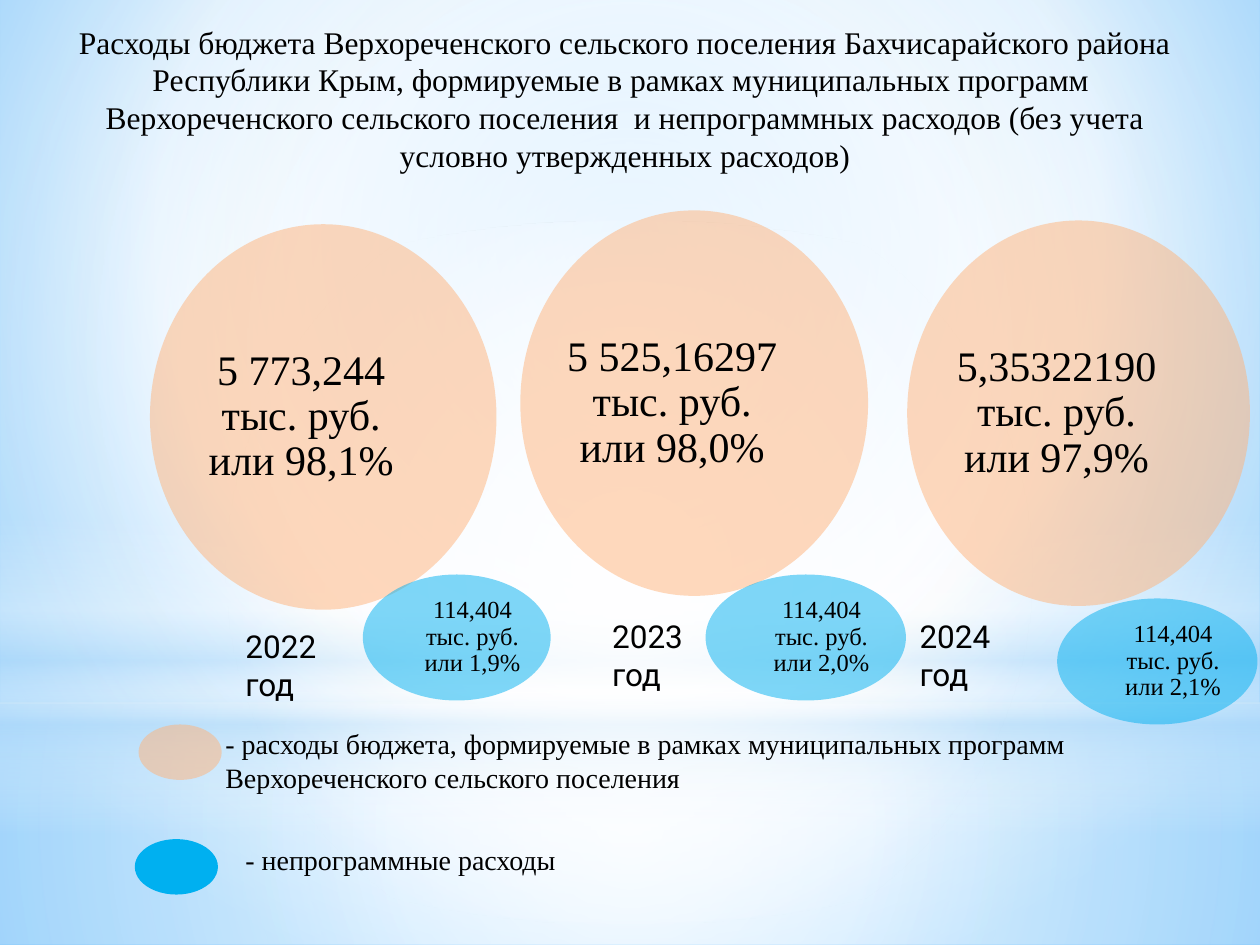
import math
from lxml import etree
from pptx import Presentation
from pptx.dml.color import RGBColor
from pptx.enum.shapes import MSO_SHAPE
from pptx.enum.text import MSO_ANCHOR, MSO_AUTO_SIZE, PP_ALIGN
from pptx.oxml.ns import qn
from pptx.util import Inches, Pt

RECT, OVAL = MSO_SHAPE.RECTANGLE, MSO_SHAPE.OVAL
LEFT, CENTER = PP_ALIGN.LEFT, PP_ALIGN.CENTER
TOP, MIDDLE = MSO_ANCHOR.TOP, MSO_ANCHOR.MIDDLE
FIT_SHAPE, FIT_NONE = MSO_AUTO_SIZE.SHAPE_TO_FIT_TEXT, MSO_AUTO_SIZE.NONE

# Content; boxes are left, top, width, height in inches
TITLE = ("Расходы бюджета Верхореченского сельского поселения Бахчисарайского района "
         "Республики Крым, формируемые в рамках муниципальных программ  "
         "Верхореченского сельского поселения  и непрограммных расходов "
         "(без учета условно утвержденных расходов)")
TITLE_BOX = (0.43, 0.13, 9.06, 1.31)

YEARS = [
    {"label": ("2022 год", (1.85, 4.93, 1.1, 0.71)),
     "program": ("5 773,244 тыс. руб. или 98,1%", (1.19, 1.78, 2.75, 3.06)),
     "other": ("114,404 тыс. руб. или 1,9%", (2.88, 4.56, 1.49, 1))},
    {"label": ("2023 год", (4.76, 4.85, 0.81, 0.71)),
     "program": ("5 525,16297 тыс. руб. или 98,0%", (4.13, 1.67, 2.76, 3.06)),
     "other": ("114,404 тыс. руб. или 2,0%", (5.6, 4.56, 1.59, 1))},
    {"label": ("2024 год", (7.2, 4.85, 1.1, 0.71)),
     "program": ("5,35322190 тыс. руб. или 97,9%", (7.2, 1.75, 2.72, 3.06)),
     "other": ("114,404 тыс. руб. или 2,1%", (8.39, 4.75, 1.59, 1))},
]

LEGEND = [
    ("program", 50, (1.1, 5.75, 0.66, 0.44), (1.69, 5.72, 7.72, 0.64),
     "- расходы бюджета, формируемые в рамках муниципальных программ "
     "Верхореченского сельского поселения"),
    ("other", 100, (1.07, 6.66, 0.66, 0.44), (1.85, 6.64, 6.77, 0.37),
     "- непрограммные расходы"),
]

THEME = {
    "serif": "Times New Roman", "sans": "Roboto", "text": "000000",
    "program": "FFB37A", "other": "00B0F0",
    "title_size": 18, "year_size": 18, "legend_size": 16,
    "program_size": 24, "other_size": 14,
}
BUBBLE_INSETS = {"program": (0.34, 0.3, 0.69, 0.3), "other": (0.48, 0.18, 0.23, 0.18)}
TEXT_INSETS = (0.1, 0.05, 0.1, 0.05)
CURVE = 4 / 3 * (math.sqrt(2) - 1)  # handle length of a quarter circle

# Gradient stops: position %, colour, opacity %
CENTRE = (50, 50, 50, 50)
BACKGROUND = [(0, "9ED5FF", 100), (60, "FFFFFF", 100), (100, "5BB9FF", 100)]
BACKDROP = [
    (RECT, (0, 5.58, 10, 1.92), CENTRE,
     [(0, "FFFFFF", 91), (37, "FFFFFF", 76), (100, "B4DCFA", 79)]),
    (RECT, (0, 0, 10, 5.58), CENTRE,
     [(0, "FFFFFF", 89), (48, "FFFFFF", 62), (100, "B4DCFA", 79)]),
    (RECT, (0, 4.12, 10, 2.5), None,
     [(0, "FFFFFF", 0), (29, "FFFFFF", 30), (45, "B4DCFA", 40),
      (55, "FFFFFF", 26), (65, "B4DCFA", 60), (100, "FFFFFF", 0)]),
    (OVAL, (0, 1.75, 10, 5.58), CENTRE, [(0, "FFFFFF", 100), (56, "FFFFFF", 0)]),
]


def inches(box):
    return [Inches(value) for value in box]


def set_opacity(color, percent):
    if percent < 100:
        etree.SubElement(color, qn("a:alpha"), val=str(percent * 1000))


def set_gradient(parent, stops, focus):
    """Swap the solid fill under parent for a radial or a vertical gradient."""
    solid = parent.find(".//" + qn("a:solidFill"))
    gradient = etree.Element(qn("a:gradFill"), rotWithShape="1")
    stop_list = etree.SubElement(gradient, qn("a:gsLst"))
    for position, color, opacity in stops:
        stop = etree.SubElement(stop_list, qn("a:gs"), pos=str(position * 1000))
        set_opacity(etree.SubElement(stop, qn("a:srgbClr"), val=color), opacity)
    if focus:
        path = etree.SubElement(gradient, qn("a:path"), path="circle")
        edges = {side: str(value * 1000) for side, value in zip("ltrb", focus)}
        etree.SubElement(path, qn("a:fillToRect"), **edges)
    else:
        etree.SubElement(gradient, qn("a:lin"), ang="5400000", scaled="0")
    solid.getparent().replace(solid, gradient)


def paint(shape, color, opacity=100):
    shape.shadow.inherit = False
    shape.line.fill.background()
    shape.fill.solid()
    shape.fill.fore_color.rgb = RGBColor.from_string(color)
    set_opacity(shape.element.spPr.find(".//" + qn("a:srgbClr")), opacity)


def write(shape, text, size, font="serif", align=LEFT, anchor=TOP,
          insets=TEXT_INSETS, fit=FIT_SHAPE, spacing=1.0):
    frame = shape.text_frame
    frame.text = text
    sides = ("margin_left", "margin_top", "margin_right", "margin_bottom")
    frame_format = {"word_wrap": True, "auto_size": fit, "vertical_anchor": anchor,
                    **dict(zip(sides, inches(insets)))}
    paragraph = frame.paragraphs[0]
    run_font = paragraph.runs[0].font
    formats = [
        (frame, frame_format),
        (paragraph, {"alignment": align, "line_spacing": spacing}),
        (run_font, {"name": THEME[font], "size": Pt(THEME[size])}),
        (run_font.color, {"rgb": RGBColor.from_string(THEME["text"])}),
    ]
    for target, values in formats:
        for name, value in values.items():
            setattr(target, name, value)


def add_bubble(shapes, box):
    """Four-curve oval whose text area is its full bounding box."""
    left, top, width, height = inches(box)

    def point(x, y):
        return round(width * (1 + x) / 2), round(height * (1 + y) / 2)

    corners = [(-1, 0), (0, -1), (1, 0), (0, 1), (-1, 0)]
    outline = [(left + x, top + y) for x, y in (point(*corner) for corner in corners)]
    builder = shapes.build_freeform(*outline[0])
    builder.add_line_segments(outline[1:], close=True)
    bubble = builder.convert_to_shape()

    # Bend each straight side into a quarter of the oval
    sides = bubble.element.spPr.findall(".//" + qn("a:lnTo"))
    for side, (x0, y0), (x1, y1) in zip(sides, corners, corners[1:]):
        curve = etree.Element(qn("a:cubicBezTo"))
        for spot in ((x0 + CURVE * x1, y0 + CURVE * y1),
                     (x1 + CURVE * x0, y1 + CURVE * y0), (x1, y1)):
            x, y = point(*spot)
            etree.SubElement(curve, qn("a:pt"), x=str(x), y=str(y))
        side.getparent().replace(side, curve)
    return bubble


def main():
    prs = Presentation()
    prs.slide_width, prs.slide_height = Inches(10), Inches(7.5)
    slide = prs.slides.add_slide(prs.slide_layouts[5])
    shapes = slide.shapes

    # Background, and soft backdrop on the slide master
    slide.background.fill.solid()
    slide.background.fill.fore_color.rgb = RGBColor.from_string(BACKGROUND[0][1])
    set_gradient(slide.element.cSld.bg, BACKGROUND, (20, 10, 20, 60))
    master_tree = prs.slide_master.shapes.element
    for index, (kind, box, focus, stops) in enumerate(BACKDROP):
        layer = shapes.add_shape(kind, *inches(box))
        paint(layer, stops[0][1])
        set_gradient(layer.element.spPr, stops, focus)
        layer.element.nvSpPr.cNvPr.set("id", str(101 + index))
        master_tree.insert(2 + index, layer.element)

    # Title
    title = shapes.title
    title.left, title.top, title.width, title.height = inches(TITLE_BOX)
    write(title, TITLE, "title_size", align=CENTER)

    # Legend
    for series, opacity, swatch_box, text_box, text in LEGEND:
        paint(shapes.add_shape(OVAL, *inches(swatch_box)), THEME[series], opacity)
        write(shapes.add_textbox(*inches(text_box)), text, "legend_size")

    # Bubbles and year labels
    for year in YEARS:
        label, label_box = year["label"]
        write(shapes.add_textbox(*inches(label_box)), label, "year_size", font="sans")
        for series, insets in BUBBLE_INSETS.items():
            amount, box = year[series]
            bubble = add_bubble(shapes, box)
            paint(bubble, THEME[series], 50)
            write(bubble, amount, series + "_size", align=CENTER, anchor=MIDDLE,
                  insets=insets, fit=FIT_NONE, spacing=0.9)

    prs.save("out.pptx")


if __name__ == "__main__":
    main()
